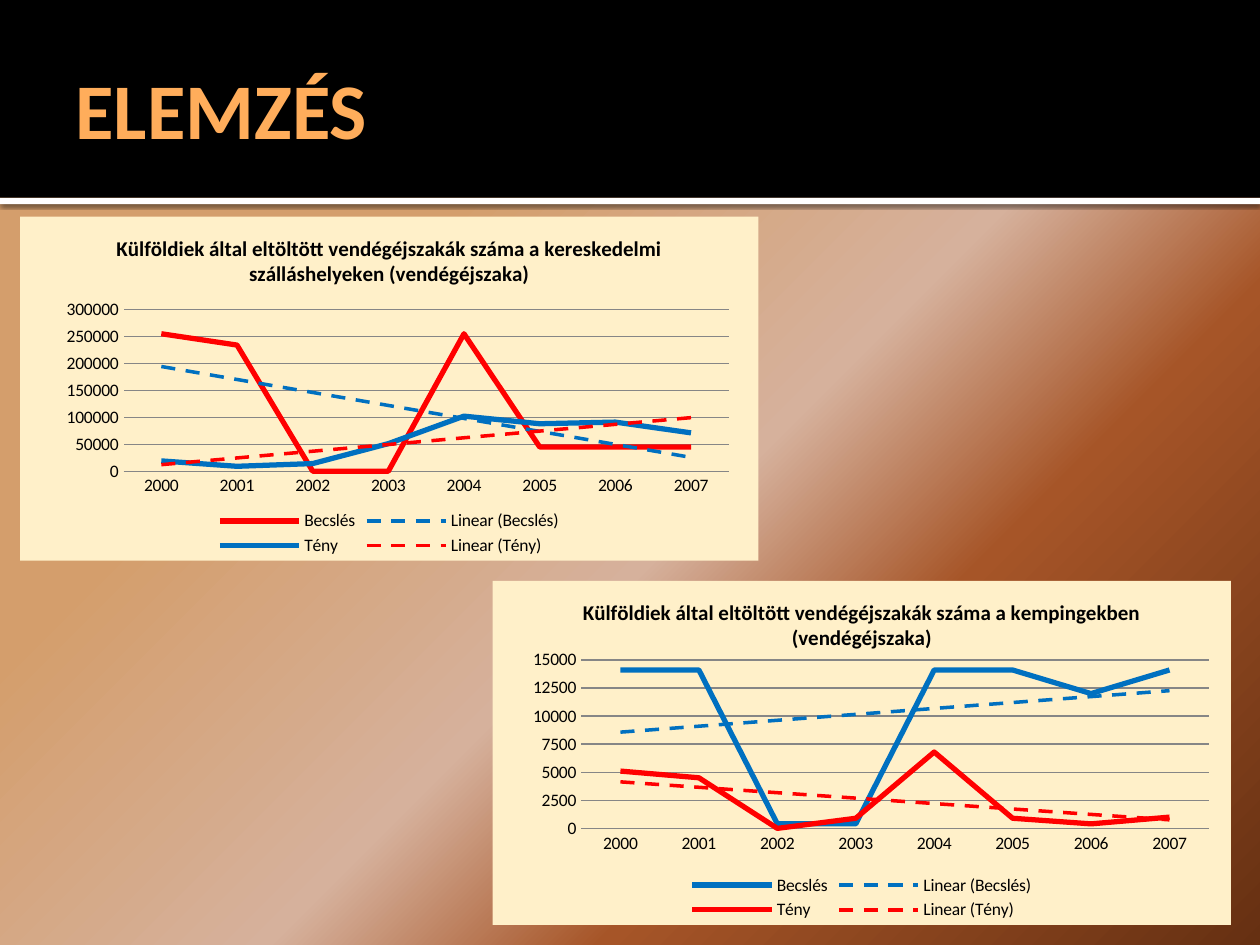
import pptx
import pptx.chart.data
import pptx.dml.color
import pptx.enum.chart
import pptx.enum.shapes
import pptx.enum.text
import pptx.oxml
import pptx.oxml.ns
import pptx.util
from pptx.util import Inches

FONT = "Calibri"
COLORS = {
    "black": "000000",
    "white": "FFFFFF",
    "title": "FFAD5B",
    "panel": "FFF0C9",
    "grid": "868686",
    "red": "FF0000",
    "blue": "0070C0",
}
BACKGROUND_STOPS = [(30, "D49E6C"), (55, "D6B19C"), (70, "A65528"), (100, "663012")]
YEARS = [str(year) for year in range(2000, 2008)]
NAMESPACES = pptx.oxml.ns.nsdecls("a", "c")


def rgb(name):
    return pptx.dml.color.RGBColor.from_string(COLORS[name])


def xml(text):
    """Parse a fragment whose root tag ends with the marker NS."""
    return pptx.oxml.parse_xml(text.replace("NS", NAMESPACES, 1))


def set_background(slide):
    fill = slide.background.fill
    fill.gradient()
    stops = "".join(
        f'<a:gs pos="{position * 1000}"><a:srgbClr val="{color}"/></a:gs>'
        for position, color in BACKGROUND_STOPS
    )
    properties = slide.background._cSld.bg.bgPr
    gradient = properties.find(pptx.oxml.ns.qn("a:gradFill"))
    properties.replace(gradient, xml(
        f'<a:gradFill NS rotWithShape="1"><a:gsLst>{stops}</a:gsLst>'
        '<a:lin ang="2700000" scaled="0"/></a:gradFill>'
    ))


def add_band(slide, top, height, color):
    """Add a rectangle over the whole slide width."""
    band = slide.shapes.add_shape(
        pptx.enum.shapes.MSO_SHAPE.RECTANGLE, 0, Inches(top), Inches(10), Inches(height))
    band.shadow.inherit = False
    band.fill.solid()
    band.fill.fore_color.rgb = rgb(color)
    band.line.fill.background()
    return band


def add_soft_shadow(shape):
    effects = shape._element.spPr.find(pptx.oxml.ns.qn("a:effectLst"))
    effects.append(xml(
        '<a:outerShdw NS blurRad="31750" dist="10160" dir="5400000" algn="tl" rotWithShape="0">'
        f'<a:srgbClr val="{COLORS["black"]}"><a:alpha val="60000"/></a:srgbClr></a:outerShdw>'
    ))


def write_text(text_frame, text, size, color="black", bold=False):
    paragraph = text_frame.paragraphs[0]
    paragraph.alignment = None
    run = paragraph.add_run()
    run.text = text
    run.font.name = FONT
    run.font.size = pptx.util.Pt(size)
    run.font.bold = bold
    run.font.color.rgb = rgb(color)
    return paragraph


def place_title(slide, text):
    title = slide.shapes.title
    title.left, title.top = Inches(0.5), Inches(0.17)
    title.width, title.height = Inches(9), Inches(1.37)
    frame = title.text_frame
    frame.margin_left = Inches(0.1)
    frame.margin_right = frame.margin_top = frame.margin_bottom = Inches(0.05)
    frame.vertical_anchor = pptx.enum.text.MSO_ANCHOR.MIDDLE
    paragraph = write_text(frame, text, size=45, color="title", bold=True)
    paragraph.alignment = pptx.enum.text.PP_ALIGN.LEFT
    title._element.getparent().append(title._element)  # in front of the bands


def set_panel_fill(chart):
    chart._chartSpace.find(pptx.oxml.ns.qn("c:chart")).addnext(xml(
        f'<c:spPr NS><a:solidFill><a:srgbClr val="{COLORS["panel"]}"/></a:solidFill>'
        '<a:ln><a:noFill/></a:ln></c:spPr>'
    ))


def set_plot_layout(chart, layout):
    plot_area = chart._chartSpace.chart.plotArea
    for old_layout in plot_area.findall(pptx.oxml.ns.qn("c:layout")):
        plot_area.remove(old_layout)
    sizes = "".join(f'<c:{tag} val="{value}"/>' for tag, value in zip("xywh", layout))
    plot_area.insert(0, xml(
        '<c:layout NS><c:manualLayout><c:layoutTarget val="inner"/>'
        f'<c:xMode val="edge"/><c:yMode val="edge"/>{sizes}</c:manualLayout></c:layout>'
    ))


def format_series(series, color, trend_color):
    series.smooth = False
    series.marker.style = pptx.enum.chart.XL_MARKER_STYLE.NONE
    series.format.line.color.rgb = rgb(color)
    series.format.line.width = pptx.util.Pt(3)
    series._element.find(pptx.oxml.ns.qn("c:cat")).addprevious(xml(
        '<c:trendline NS><c:spPr><a:ln w="25400"><a:solidFill>'
        f'<a:srgbClr val="{COLORS[trend_color]}"/></a:solidFill><a:prstDash val="dash"/></a:ln>'
        '</c:spPr><c:trendlineType val="linear"/><c:dispRSqr val="0"/><c:dispEq val="0"/>'
        '</c:trendline>'
    ))


def format_axes(chart, maximum, step):
    value_axis, category_axis = chart.value_axis, chart.category_axis
    for axis in (value_axis, category_axis):
        axis.major_tick_mark = axis.minor_tick_mark = pptx.enum.chart.XL_TICK_MARK.NONE
    category_axis.format.line.color.rgb = rgb("grid")
    value_axis.format.line.fill.background()
    value_axis.major_gridlines.format.line.color.rgb = rgb("grid")
    value_axis.minimum_scale = 0
    value_axis.maximum_scale = maximum
    value_axis.major_unit = step


def add_trend_chart(slide, left, top, title, estimate, actual, colors, maximum, step, layout):
    """Add a line chart of estimate and actual values with linear trends."""
    data = pptx.chart.data.CategoryChartData(number_format="General")
    data.categories = YEARS
    data.add_series("Becslés", estimate)
    data.add_series("Tény", actual)
    chart = slide.shapes.add_chart(
        pptx.enum.chart.XL_CHART_TYPE.LINE, Inches(left), Inches(top),
        Inches(5.86), Inches(2.73), data).chart
    chart.font.name = FONT
    chart.font.size = pptx.util.Pt(10)
    chart.font.color.rgb = rgb("black")
    write_text(chart.chart_title.text_frame, title, size=12, bold=True)
    chart.chart_title.include_in_layout = False
    chart.has_legend = True
    chart.legend.position = pptx.enum.chart.XL_LEGEND_POSITION.BOTTOM
    chart.legend.include_in_layout = False
    chart.plots[0].vary_by_categories = False
    for series, color, trend_color in zip(chart.plots[0].series, colors, ("blue", "red")):
        format_series(series, color, trend_color)
    format_axes(chart, maximum, step)
    set_panel_fill(chart)
    set_plot_layout(chart, layout)


def main():
    presentation = pptx.Presentation()
    presentation.slide_width, presentation.slide_height = Inches(10), Inches(7.5)
    slide = presentation.slides.add_slide(presentation.slide_layouts[5])
    set_background(slide)
    add_soft_shadow(add_band(slide, top=1.57, height=0.05, color="white"))
    add_band(slide, top=0, height=1.57, color="black")
    place_title(slide, "ELEMZÉS")
    add_trend_chart(
        slide, 0.16, 1.72,
        "Külföldiek által eltöltött vendégéjszakák száma a kereskedelmi "
        "szálláshelyeken (vendégéjszaka)",
        estimate=[255000, 234000, 0, 0, 255000, 45000, 45000, 45000],
        actual=[19000, 9000, 14000, 51000, 102000, 88000, 91000, 71000],
        colors=("red", "blue"), maximum=300000, step=50000, layout=(0.14, 0.27, 0.82, 0.47))
    add_trend_chart(
        slide, 3.91, 4.61,
        "Külföldiek által eltöltött vendégéjszakák száma a kempingekben (vendégéjszaka)",
        estimate=[14100, 14100, 400, 400, 14100, 14100, 12000, 14100],
        actual=[5100, 4500, 0, 900, 6800, 900, 400, 1000],
        colors=("blue", "red"), maximum=15000, step=2500, layout=(0.12, 0.23, 0.85, 0.49))
    presentation.save("out.pptx")


if __name__ == "__main__":
    main()
